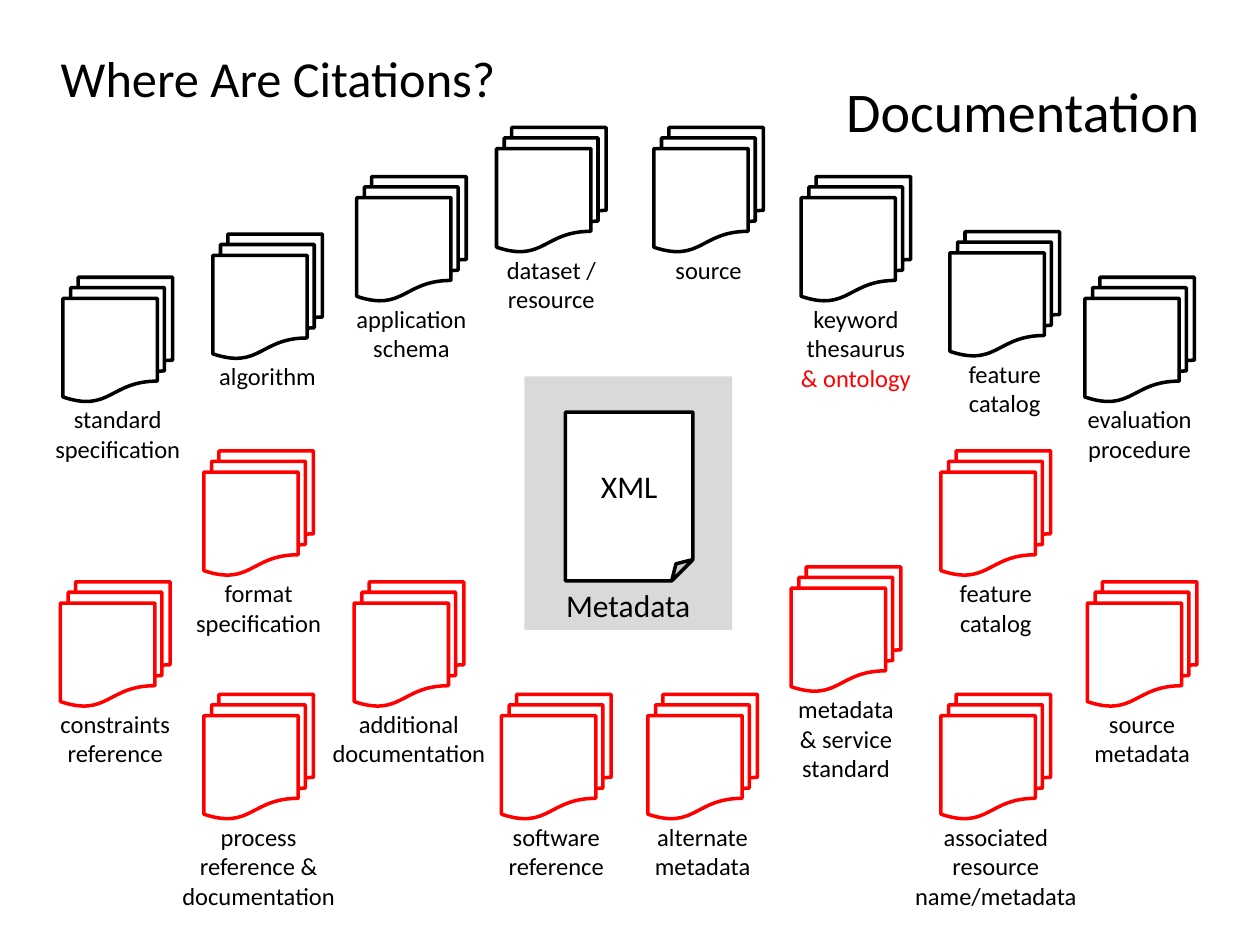
from dataclasses import dataclass

from pptx import Presentation
from pptx.dml.color import RGBColor
from pptx.enum.shapes import MSO_SHAPE
from pptx.enum.text import MSO_ANCHOR, MSO_AUTO_SIZE, PP_ALIGN
from pptx.util import Cm, Pt

BLACK = RGBColor(0x00, 0x00, 0x00)
WHITE = RGBColor(0xFF, 0xFF, 0xFF)
RED = RGBColor(0xFF, 0x00, 0x00)
GREY = RGBColor(0xD9, 0xD9, 0xD9)

# Lengths in cm
ICON_W, ICON_H = 2.21, 2.51
LABEL_DROP = 2.44
LABEL_PAD, LINE_H = 0.26, 0.6

LABEL_FRAME = {"word_wrap": False, "auto_size": MSO_AUTO_SIZE.SHAPE_TO_FIT_TEXT}


@dataclass
class Document:
    left: float
    top: float
    label_w: float
    lines: tuple[str, ...]
    color: RGBColor = BLACK
    red_line: str = ""


DOCUMENTS = [
    # Upper arc
    Document(10.01, 2.57, 2.34, ("dataset /", "resource")),
    Document(13.18, 2.57, 1.85, ("source",)),
    Document(16.15, 3.56, 2.74, ("keyword", "thesaurus", "& ontology"),
             red_line="& ontology"),
    Document(21.87, 5.59, 2.64, ("evaluation", "procedure")),
    Document(1.27, 5.59, 3.07, ("standard", "specification")),
    Document(4.29, 4.72, 2.49, ("algorithm",)),
    Document(19.15, 4.67, 1.98, ("feature", "catalog")),
    Document(7.19, 3.56, 2.77, ("application", "schema")),
    # Lower arc
    Document(13.06, 14, 2.46, ("alternate", "metadata"), RED),
    Document(15.95, 11.43, 2.46, ("metadata", "& service", "standard"), RED),
    Document(18.97, 14, 3.81, ("associated", "resource", "name/metadata"), RED),
    Document(7.14, 11.73, 3.63, ("additional", "documentation"), RED),
    Document(1.22, 11.73, 2.74, ("constraints", "reference"), RED),
    Document(21.92, 11.73, 2.46, ("source", "metadata"), RED),
    Document(4.11, 14, 3.63, ("process", "reference &", "documentation"), RED),
    Document(10.11, 14, 2.44, ("software", "reference"), RED),
    Document(18.97, 9.09, 1.98, ("feature", "catalog"), RED),
    Document(4.11, 9.09, 3.07, ("format", "specification"), RED),
]


def write(p, text: str, size: float, color: RGBColor = BLACK,
          align: PP_ALIGN = PP_ALIGN.CENTER) -> None:
    p.alignment = align
    r = p.add_run()
    r.text = text
    r.font.color.rgb = color
    for name, value in {"name": "Calibri", "size": Pt(size)}.items():
        setattr(r.font, name, value)


def format_frame(tf, formats: dict) -> None:
    for name, value in formats.items():
        setattr(tf, name, value)


def add_box(shapes, kind: MSO_SHAPE, left: float, top: float, width: float,
            height: float, fill: RGBColor, line: RGBColor | None = None):
    sp = shapes.add_shape(kind, Cm(left), Cm(top), Cm(width), Cm(height))
    sp.shadow.inherit = False
    sp.fill.solid()
    sp.fill.fore_color.rgb = fill
    if line is None:
        sp.line.fill.background()
    else:
        sp.line.color.rgb = line
        sp.line.width = Pt(2)
    return sp


def add_document(shapes, doc: Document) -> None:
    group = shapes.add_group_shape()
    add_box(group.shapes, MSO_SHAPE.FLOWCHART_MULTIDOCUMENT, doc.left, doc.top,
            ICON_W, ICON_H, WHITE, doc.color)
    label = group.shapes.add_textbox(
        Cm(doc.left + (ICON_W - doc.label_w) / 2), Cm(doc.top + LABEL_DROP),
        Cm(doc.label_w), Cm(LABEL_PAD + LINE_H * len(doc.lines)))
    tf = label.text_frame
    format_frame(tf, LABEL_FRAME)
    for i, line in enumerate(doc.lines):
        p = tf.add_paragraph() if i else tf.paragraphs[0]
        write(p, line, 14, RED if line == doc.red_line else BLACK)


def main() -> None:
    prs = Presentation()
    prs.slide_width, prs.slide_height = Cm(25.4), Cm(19.05)
    s = prs.slides.add_slide(prs.slide_layouts[5])

    # Grey metadata panel, the title, and the XML page
    panel = add_box(s.shapes, MSO_SHAPE.RECTANGLE, 10.57, 7.59, 4.19, 5.11, GREY)
    format_frame(panel.text_frame, {"vertical_anchor": MSO_ANCHOR.BOTTOM})
    write(panel.text_frame.paragraphs[0], "Metadata", 18)

    title = s.shapes.title
    place = {"left": 0.97, "top": 0.79, "width": 22.86, "height": 1.55}
    for name, value in place.items():
        setattr(title, name, Cm(value))
    format_frame(title.text_frame, {"vertical_anchor": MSO_ANCHOR.MIDDLE,
                                    "auto_size": MSO_AUTO_SIZE.NONE})
    write(title.text_frame.paragraphs[0], "Where Are Citations?", 28.8,
          align=PP_ALIGN.LEFT)

    page = add_box(s.shapes, MSO_SHAPE.FOLDED_CORNER, 11.4, 8.31, 2.57, 3.4,
                   WHITE, BLACK)
    format_frame(page.text_frame, {"vertical_anchor": MSO_ANCHOR.MIDDLE})
    write(page.text_frame.paragraphs[0], "XML", 18)

    # Cited documents around the metadata
    for doc in DOCUMENTS:
        add_document(s.shapes, doc)

    # Heading at the right
    heading = s.shapes.add_textbox(Cm(16.81), Cm(1.42), Cm(7.72), Cm(1.63))
    format_frame(heading.text_frame, LABEL_FRAME)
    write(heading.text_frame.paragraphs[0], "Documentation", 32,
          align=PP_ALIGN.LEFT)

    prs.save("out.pptx")


if __name__ == "__main__":
    main()
